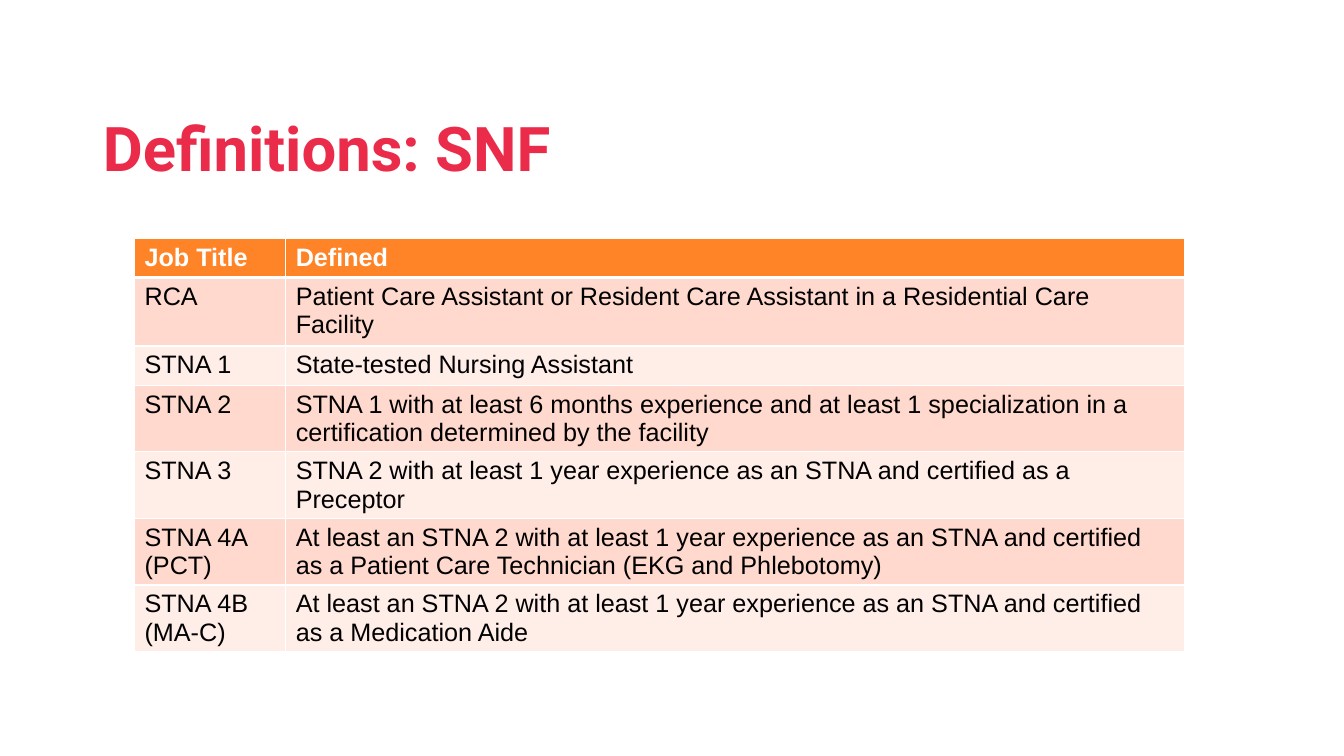
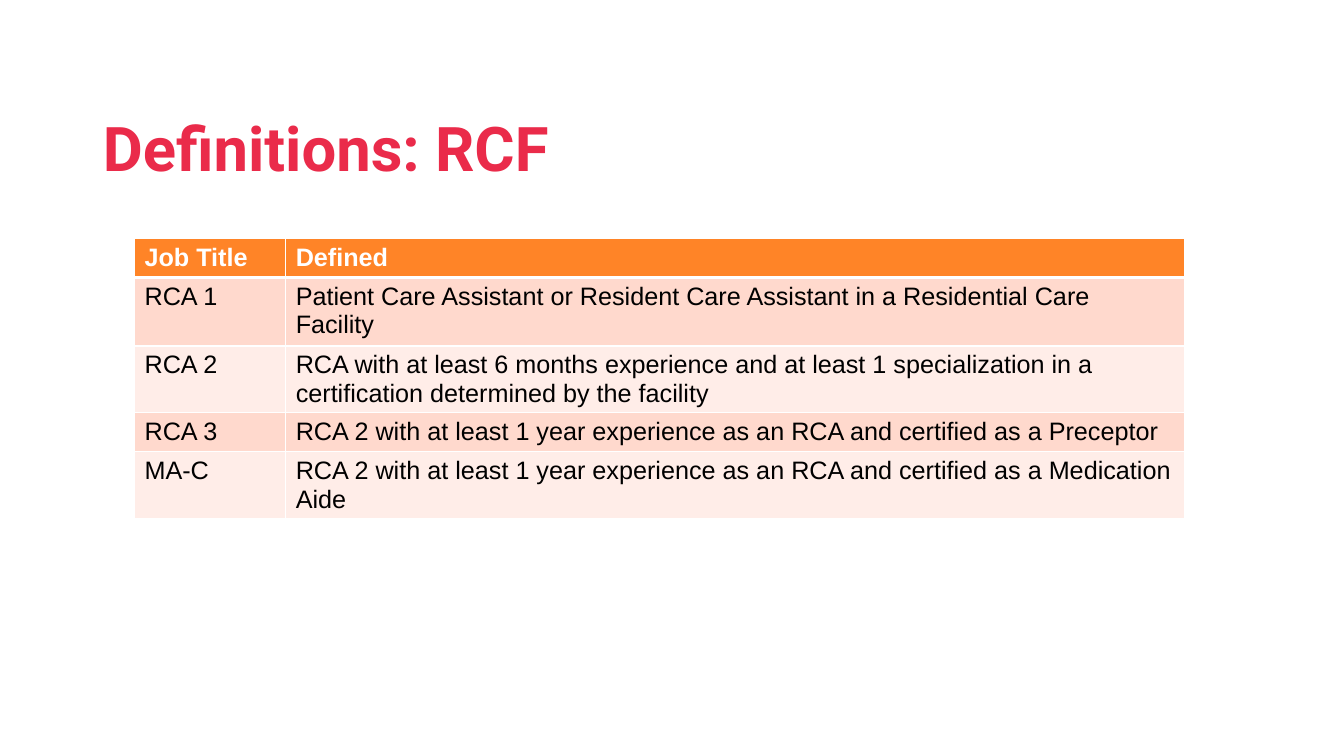
from dataclasses import dataclass

from lxml import etree
from pptx import Presentation
from pptx.dml.color import RGBColor
from pptx.enum import text
from pptx.oxml import ns
from pptx.util import Cm, Pt


@dataclass(frozen=True)
class Theme:
    title_font: str = "Roboto"
    body_font: str = "Arial"
    title_size: int = 44
    body_size: int = 18
    title: str = "EA2B4A"
    header: str = "FF8427"
    bands: tuple = ("FFD9CD", "FFEDE8")
    ink: str = "000000"
    paper: str = "FFFFFF"
    thin: int = 1
    thick: int = 3


HEADINGS = ("Job Title", "Defined")
COLUMN_WIDTHS = (Cm(3.81), Cm(22.66))
ROW_HEIGHT = Cm(0.99)
FIRST_ROW_HEIGHT = Cm(1.73)

RCA_DEFINITION = "Patient Care Assistant or Resident Care Assistant in a Residential Care Facility"
SPECIALIZED = "with at least 6 months experience and at least 1 specialization in a certification determined by the facility"
STNA_YEAR = "with at least 1 year experience as an STNA and certified as a"
RCA_YEAR = "with at least 1 year experience as an RCA and certified as a"

DEFINITIONS = {
    "Definitions: SNF": [
        ("RCA", RCA_DEFINITION),
        ("STNA 1", "State-tested Nursing Assistant"),
        ("STNA 2", f"STNA 1 {SPECIALIZED}"),
        ("STNA 3", f"STNA 2 {STNA_YEAR} Preceptor"),
        ("STNA 4A (PCT)", f"At least an STNA 2 {STNA_YEAR} Patient Care Technician (EKG and Phlebotomy)"),
        ("STNA 4B (MA-C)", f"At least an STNA 2 {STNA_YEAR} Medication Aide"),
    ],
    "Definitions: RCF": [
        ("RCA 1", RCA_DEFINITION),
        ("RCA 2", f"RCA {SPECIALIZED}"),
        ("RCA 3", f"RCA 2 {RCA_YEAR} Preceptor"),
        ("MA-C", f"RCA 2 {RCA_YEAR} Medication Aide"),
    ],
}


def write(tf, content, *, font, size, color, bold=False):
    p = tf.paragraphs[0]
    p.alignment = text.PP_ALIGN.LEFT
    r = p.add_run()
    r.text = content
    r.font.name = font
    r.font.size = Pt(size)
    r.font.bold = bold
    r.font.color.rgb = RGBColor.from_string(color)


def set_borders(cell, color, **widths):
    """Draw the cell's edges; widths maps L, R, T and B, in that order, to points."""
    tc_pr = cell._tc.get_or_add_tcPr()
    for side, width in widths.items():
        ln = etree.SubElement(tc_pr, ns.qn(f"a:ln{side}"), w=str(Pt(width)))
        fill = etree.SubElement(ln, ns.qn("a:solidFill"))
        etree.SubElement(fill, ns.qn("a:srgbClr"), val=color)


class Deck:
    def __init__(self, theme):
        self.theme = theme
        self.prs = Presentation()
        self.prs.slide_width, self.prs.slide_height = Cm(33.87), Cm(19.05)
        self.s = None

    def add_slide(self, title):
        t = self.theme
        self.s = self.prs.slides.add_slide(self.prs.slide_layouts[5])
        sp = self.s.shapes.title
        sp.left, sp.top, sp.width, sp.height = Cm(2.34), Cm(1.9), Cm(29.2), Cm(3.6)
        tf = sp.text_frame
        tf.auto_size = text.MSO_AUTO_SIZE.NONE
        tf.vertical_anchor = text.MSO_ANCHOR.MIDDLE
        write(tf, title, font=t.title_font, size=t.title_size, color=t.title, bold=True)

    def add_definitions(self, entries):
        """Add the table; rows with longer text grow to fit it."""
        rows = [HEADINGS, *entries]
        height = FIRST_ROW_HEIGHT + ROW_HEIGHT * (len(rows) - 1)
        table = self.s.shapes.add_table(
            len(rows), len(HEADINGS), Cm(3.39), Cm(6), sum(COLUMN_WIDTHS), height
        ).table
        table.horz_banding = False
        for column, width in zip(table.columns, COLUMN_WIDTHS):
            column.width = width
        for i, row in enumerate(rows):
            table.rows[i].height = FIRST_ROW_HEIGHT if i == 1 else ROW_HEIGHT
            for j, content in enumerate(row):
                self.fill_cell(table.cell(i, j), content, i)

    def fill_cell(self, cell, content, row):
        t = self.theme
        is_header = row == 0
        set_borders(
            cell, t.paper, L=t.thin, R=t.thin,
            T=t.thick if row == 1 else t.thin,
            B=t.thick if is_header else t.thin,
        )
        fill = t.header if is_header else t.bands[(row - 1) % len(t.bands)]
        cell.fill.solid()
        cell.fill.fore_color.rgb = RGBColor.from_string(fill)
        write(cell.text_frame, content, font=t.body_font, size=t.body_size,
              color=t.paper if is_header else t.ink, bold=is_header)


def main():
    deck = Deck(Theme())
    for title, entries in DEFINITIONS.items():
        deck.add_slide(title)
        deck.add_definitions(entries)
    deck.prs.save("out.pptx")


if __name__ == "__main__":
    main()
